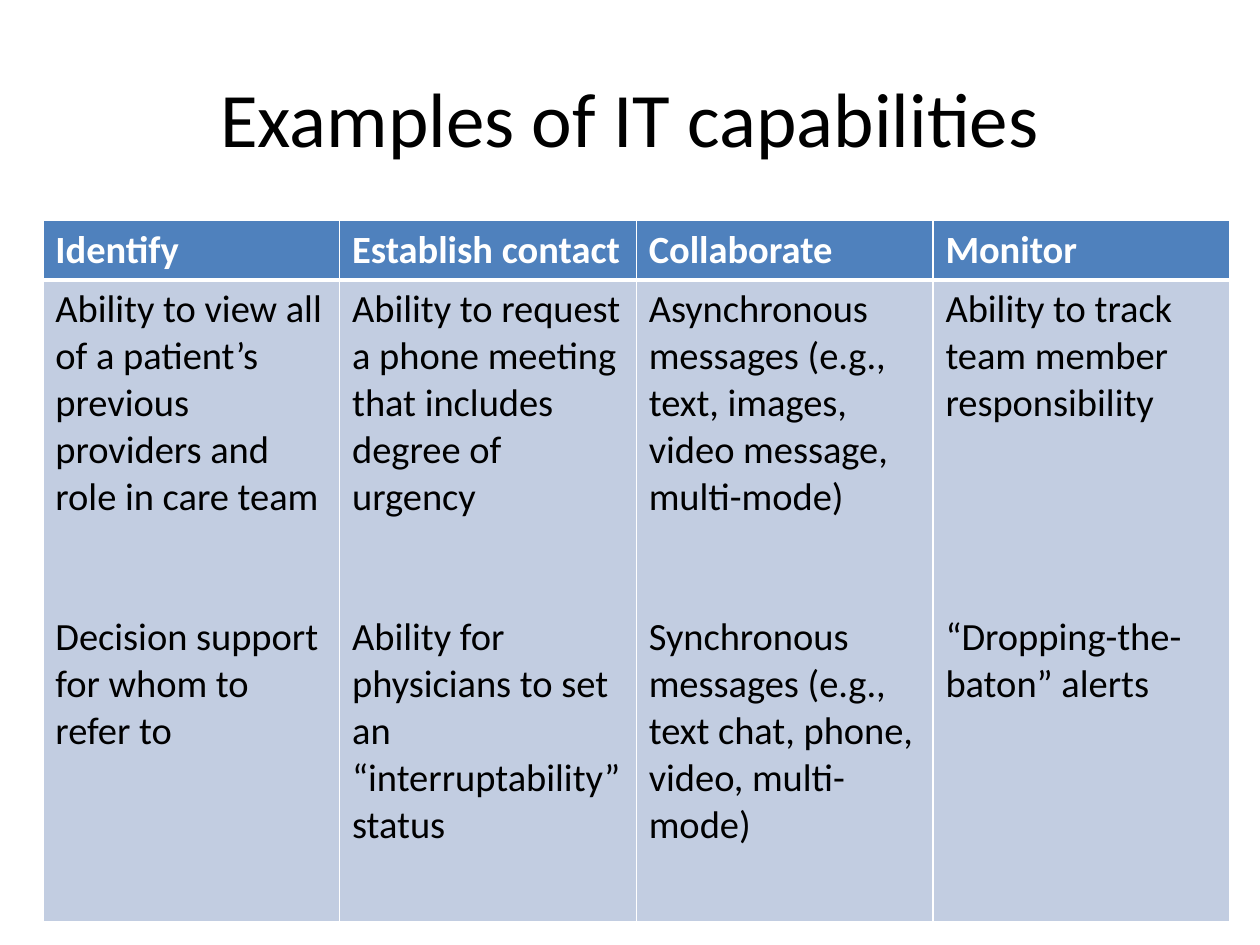
from dataclasses import dataclass

from lxml import etree
from pptx import Presentation
from pptx.dml.color import RGBColor
from pptx.enum.text import MSO_ANCHOR, PP_ALIGN
from pptx.oxml.ns import qn
from pptx.util import Inches, Pt

LEFT, CENTER = PP_ALIGN.LEFT, PP_ALIGN.CENTER
TOP, MIDDLE = MSO_ANCHOR.TOP, MSO_ANCHOR.MIDDLE


@dataclass(frozen=True)
class Theme:
    font: str = "Calibri"
    title_size: int = 44
    table_size: int = 22
    text: str = "000000"
    header_text: str = "FFFFFF"
    header_fill: str = "4F81BD"
    body_fill: str = "C2CDE1"
    border: str = "FFFFFF"
    thin: int = 1
    thick: int = 3
    line_height: float = 26.8  # points taken by one line of table text


theme = Theme()


def write_text(paragraph, text, size=theme.table_size, color=theme.text,
               bold=False, align=LEFT, space_before=0):
    run = paragraph.add_run()
    run.text = text
    run.font.name = theme.font
    run.font.size = Pt(size)
    run.font.bold = bold
    run.font.color.rgb = RGBColor.from_string(color)
    paragraph.alignment = align
    paragraph.space_before = Pt(space_before)


def format_cell(cell, fill, top, bottom):
    properties = cell._tc.get_or_add_tcPr()
    widths = {"a:lnL": theme.thin, "a:lnR": theme.thin, "a:lnT": top, "a:lnB": bottom}
    for side, width in widths.items():
        line = etree.SubElement(properties, qn(side), w=str(Pt(width)))
        line_fill = etree.SubElement(line, qn("a:solidFill"))
        etree.SubElement(line_fill, qn("a:srgbClr"), val=theme.border)
    cell.fill.solid()
    cell.fill.fore_color.rgb = RGBColor.from_string(fill)
    cell.vertical_anchor = TOP


presentation = Presentation()
presentation.slide_width, presentation.slide_height = Inches(10), Inches(7.5)
slide = presentation.slides.add_slide(presentation.slide_layouts[5])

# Title
title = slide.shapes.title
title.left, title.top = Inches(0.5), Inches(0.3)
title.width, title.height = Inches(9), Inches(1.25)
title.text_frame.vertical_anchor = MIDDLE
write_text(title.text_frame.paragraphs[0], "Examples of IT capabilities",
           size=theme.title_size, align=CENTER)

# Capabilities: heading, first example, second example, lines left between them
capabilities = [
    ("Identify",
     "Ability to view all of a patient’s previous providers and role in care team",
     "Decision support for whom to refer to", 2),
    ("Establish contact",
     "Ability to request a phone meeting that includes degree of urgency",
     "Ability for physicians to set an “interruptability” status", 2),
    ("Collaborate",
     "Asynchronous messages (e.g., text, images, video message, multi-mode)",
     "Synchronous messages (e.g., text chat, phone, video, multi-mode)", 2),
    ("Monitor",
     "Ability to track team member responsibility",
     "“Dropping-the-baton” alerts", 4),
]

# Table
header_height, body_height = Inches(0.47), Inches(5.09)
table = slide.shapes.add_table(
    2, len(capabilities), Inches(0.34), Inches(1.75),
    Inches(9.42), header_height + body_height).table
table.rows[0].height, table.rows[1].height = header_height, body_height

for column, (heading, first, second, gap_lines) in enumerate(capabilities):
    header, body = table.cell(0, column), table.cell(1, column)
    format_cell(header, theme.header_fill, top=theme.thin, bottom=theme.thick)
    format_cell(body, theme.body_fill, top=theme.thick, bottom=theme.thin)
    write_text(header.text_frame.paragraphs[0], heading,
               color=theme.header_text, bold=True)
    write_text(body.text_frame.paragraphs[0], first)
    write_text(body.text_frame.add_paragraph(), second,
               space_before=gap_lines * theme.line_height)

presentation.save("out.pptx")
